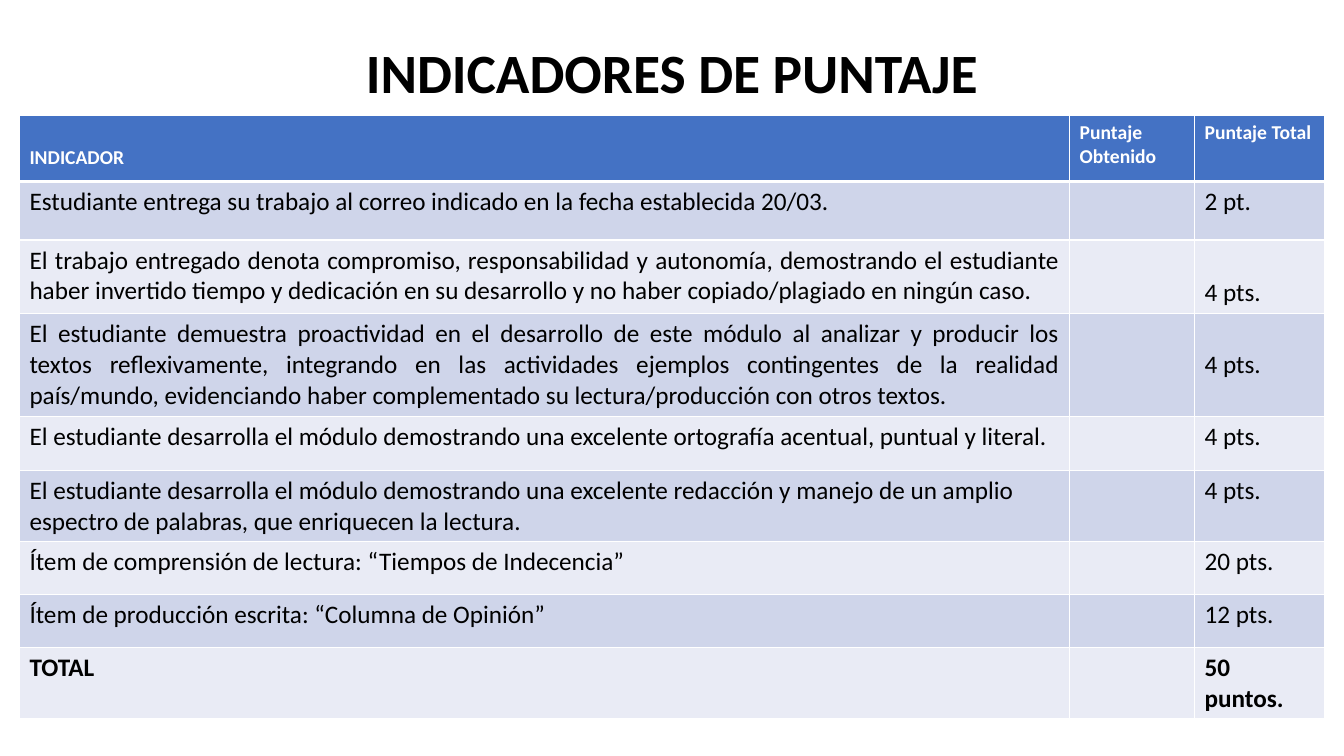
from dataclasses import dataclass

from lxml import etree
from pptx import Presentation
from pptx.dml.color import RGBColor
from pptx.enum.text import MSO_ANCHOR, PP_ALIGN
from pptx.oxml.ns import qn
from pptx.util import Cm, Pt

TOP, MIDDLE, BOTTOM = MSO_ANCHOR.TOP, MSO_ANCHOR.MIDDLE, MSO_ANCHOR.BOTTOM
LEFT, CENTER, JUSTIFY = PP_ALIGN.LEFT, PP_ALIGN.CENTER, PP_ALIGN.JUSTIFY


@dataclass(frozen=True)
class Theme:
    font: str = "Calibri"
    title_size: float = 39.6
    header_size: float = 14
    body_size: float = 18
    ink: str = "000000"
    paper: str = "FFFFFF"
    header: str = "4472C4"
    bands: tuple = ("CFD5EA", "E9EBF5")
    rule: float = 1
    header_rule: float = 3


THEME = Theme()

HEADINGS = ("INDICADOR", "Puntaje Obtenido", "Puntaje Total")
COLUMN_SHARES = (10.42, 1.24, 1.29)
HEADER_HEIGHT = 1.65

# Indicator, points, row height in cm, indicator alignment, points anchor
INDICATORS = (
    ("Estudiante entrega su trabajo al correo indicado en la fecha establecida 20/03.",
     "2 pt.", 1.48, LEFT, TOP),
    ("El trabajo entregado denota compromiso, responsabilidad y autonomía, demostrando "
     "el estudiante haber invertido tiempo y dedicación en su desarrollo y no haber "
     "copiado/plagiado en ningún caso.",
     "4 pts.", 1.85, JUSTIFY, BOTTOM),
    ("El estudiante demuestra proactividad en el desarrollo de este módulo al analizar y "
     "producir los textos reflexivamente, integrando en las actividades ejemplos "
     "contingentes de la realidad país/mundo, evidenciando haber complementado su "
     "lectura/producción con otros textos.",
     "4 pts.", 2.6, JUSTIFY, MIDDLE),
    ("El estudiante desarrolla el módulo demostrando una excelente ortografía acentual, "
     "puntual y literal.",
     "4 pts.", 1.35, LEFT, TOP),
    ("El estudiante desarrolla el módulo demostrando una excelente redacción y manejo de "
     "un amplio espectro de palabras, que enriquecen la lectura.",
     "4 pts.", 1.8, LEFT, TOP),
    ("Ítem de comprensión de lectura: “Tiempos de Indecencia”", "20 pts.", 1.33, LEFT, TOP),
    ("Ítem de producción escrita: “Columna de Opinión”", "12 pts.", 1.33, LEFT, TOP),
    ("TOTAL", "50 puntos.", 1.8, LEFT, TOP),
)


def set_font(para, size, color, bold):
    para.font.name = THEME.font
    para.font.size = Pt(size)
    para.font.bold = bold
    para.font.color.rgb = RGBColor.from_string(color)


def add_borders(cell, bottom):
    """Draw the four cell rules; they must precede the cell fill."""
    widths = {"a:lnL": THEME.rule, "a:lnR": THEME.rule,
              "a:lnT": THEME.rule, "a:lnB": bottom}
    properties = cell._tc.get_or_add_tcPr()
    for tag, width in widths.items():
        line = etree.SubElement(properties, qn(tag), w=str(Pt(width)))
        fill = etree.SubElement(line, qn("a:solidFill"))
        etree.SubElement(fill, qn("a:srgbClr"), val=THEME.paper)


def fill_cell(cell, text, fill, size, color, bold, align=LEFT, anchor=TOP,
              bottom_rule=THEME.rule):
    add_borders(cell, bottom_rule)
    cell.fill.solid()
    cell.fill.fore_color.rgb = RGBColor.from_string(fill)
    cell.vertical_anchor = anchor
    cell.text = text
    para = cell.text_frame.paragraphs[0]
    para.alignment = align
    set_font(para, size, color, bold)


def add_title(page, left, top, width, height):
    box = page.shapes.add_textbox(Cm(left), Cm(top), Cm(width), Cm(height))
    frame = box.text_frame
    frame.word_wrap = True
    frame.vertical_anchor = MIDDLE
    para = frame.paragraphs[0]
    para.text = "INDICADORES DE PUNTAJE"
    para.alignment = CENTER
    para.line_spacing = 0.9
    set_font(para, THEME.title_size, THEME.ink, True)


def add_score_table(page, left, top, width):
    heights = [HEADER_HEIGHT] + [row[2] for row in INDICATORS]
    table = page.shapes.add_table(len(heights), len(HEADINGS), Cm(left), Cm(top),
                                  Cm(width), Cm(sum(heights))).table
    for column, share in zip(table.columns, COLUMN_SHARES):
        column.width = Cm(width * share / sum(COLUMN_SHARES))
    for row, height in zip(table.rows, heights):
        row.height = Cm(height)

    # Header row
    for index, heading in enumerate(HEADINGS):
        fill_cell(table.cell(0, index), heading, THEME.header, THEME.header_size,
                  THEME.paper, True, anchor=TOP if index else BOTTOM,
                  bottom_rule=THEME.header_rule)
    table.cell(0, 0).margin_bottom = Cm(0.3)

    # Indicator rows, the last one being the total
    for index, (indicator, points, _, align, anchor) in enumerate(INDICATORS):
        band = THEME.bands[index % 2]
        bold = index == len(INDICATORS) - 1
        contents = ((indicator, align, TOP), ("", LEFT, TOP), (points, LEFT, anchor))
        for column, (text, alignment, position) in enumerate(contents):
            fill_cell(table.cell(index + 1, column), text, band, THEME.body_size,
                      THEME.ink, bold, alignment, position)


def main():
    deck = Presentation()
    deck.slide_width, deck.slide_height = Cm(33.87), Cm(19.05)
    page = deck.slides.add_slide(deck.slide_layouts[6])
    add_title(page, 2.33, 1, 29.21, 1.83)
    add_score_table(page, 0.49, 2.92, 32.89)
    deck.save("out.pptx")


if __name__ == "__main__":
    main()
